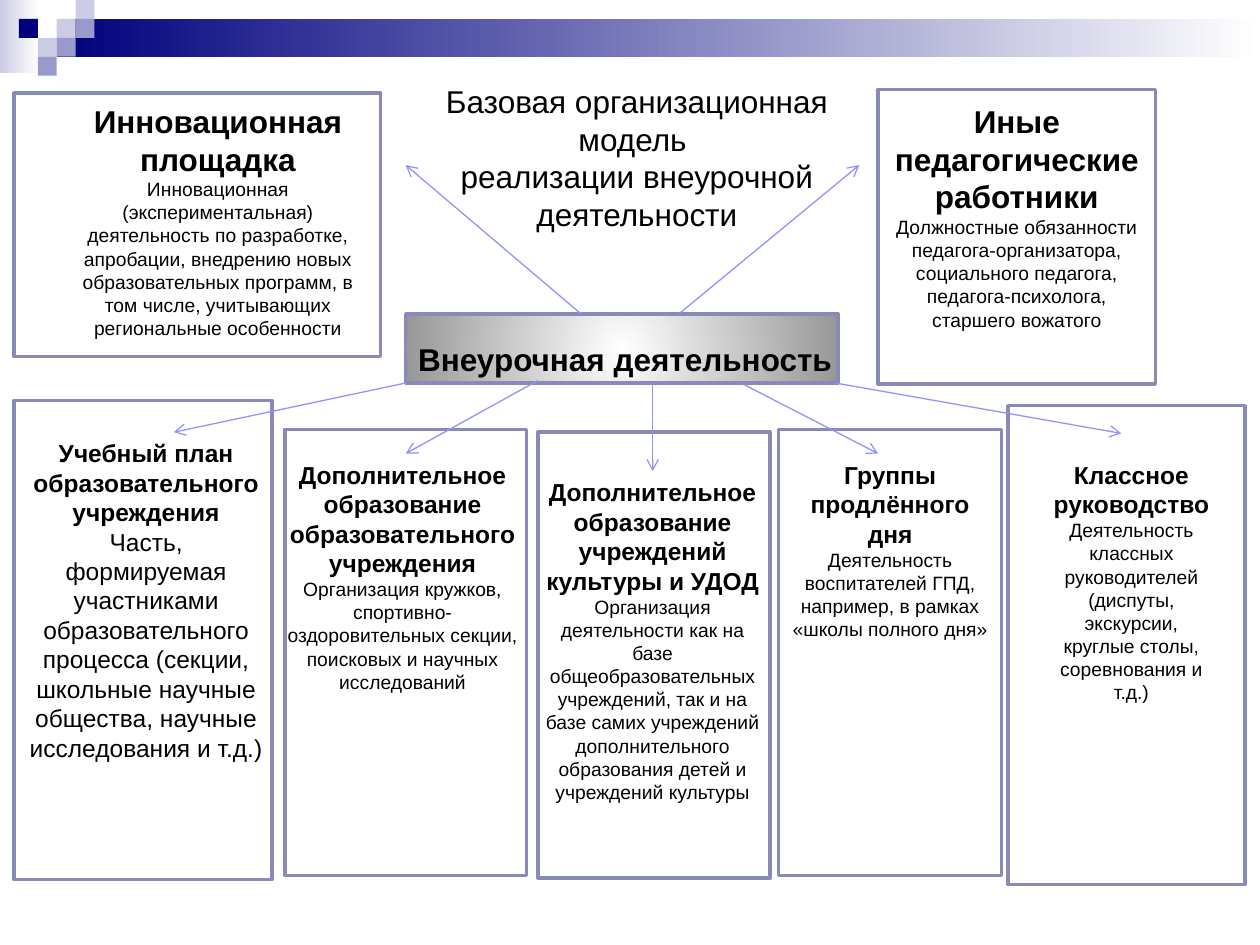
from lxml import etree
from pptx import Presentation
from pptx.dml.color import RGBColor
from pptx.enum.shapes import MSO_CONNECTOR, MSO_SHAPE
from pptx.enum.text import MSO_AUTO_SIZE, PP_ALIGN
from pptx.oxml.ns import qn
from pptx.util import Inches, Pt

RECT, STRAIGHT = MSO_SHAPE.RECTANGLE, MSO_CONNECTOR.STRAIGHT
LEFT, CENTER = PP_ALIGN.LEFT, PP_ALIGN.CENTER
GROW = MSO_AUTO_SIZE.SHAPE_TO_FIT_TEXT
NAVY, LILAC, VIOLET = "00007D", "CCCCE6", "9999CC"
WHITE, BLACK, GREY, FRAME, ARROW = "FFFFFF", "000000", "979797", "8A8AB9", "9393FC"

# The slide is a grid of 100 columns and 75 rows
COLUMNS, ROWS = 100, 75
deck = Presentation()
deck.slide_width, deck.slide_height = Inches(10), Inches(7.5)
page = deck.slides.add_slide(deck.slide_layouts[6])

# Cards: frame box, text box offset (column, row, width, height), heading, body, sizes
TOP_CARDS = [
    ((1.1, 7.4, 29.1, 20.9), (3.2, 0.2, 26, 20), "Инновационная площадка",
     "Инновационная (экспериментальная) деятельность по разработке, апробации, "
     "внедрению новых образовательных программ, в том числе, учитывающих "
     "региональные особенности", 18, 11),
    ((69.7, 7.1, 22, 23.4), (0, 0.5, 22, 22.4), "Иные педагогические работники",
     "Должностные обязанности педагога-организатора, социального педагога, "
     "педагога-психолога, старшего вожатого", 18, 11),
]
BOTTOM_CARDS = [
    ((1.1, 31.8, 20.5, 38), (0, 2.5, 21, 26.9), "Учебный план образовательного учреждения",
     "Часть, формируемая участниками образовательного процесса (секции, школьные "
     "научные общества, научные исследования и т.д.)", 14, 14),
    ((22.6, 34.1, 19.2, 35.4), (-0.9, 1.9, 20.5, 19.7),
     "Дополнительное образование образовательного учреждения",
     "Организация кружков, спортивно-оздоровительных секции, поисковых и научных "
     "исследований", 14, 11),
    ((42.7, 34.3, 18.4, 35.4), (-0.9, 3.1, 20, 27.1),
     "Дополнительное образование учреждений культуры и УДОД",
     "Организация деятельности как на базе общеобразовательных учреждений, так и на "
     "базе самих учреждений дополнительного образования детей и учреждений культуры",
     14, 11),
    ((61.8, 34.1, 17.7, 35.4), (0, 1.9, 17.7, 15.5), "Группы продлённого дня",
     "Деятельность воспитателей ГПД, например, в рамках «школы полного дня»", 14, 11),
    ((80, 32.2, 18.8, 38), (2.3, 3.8, 15, 20.5), "Классное руководство",
     "Деятельность классных руководителей (диспуты, экскурсии, круглые столы, "
     "соревнования и т.д.)", 14, 11),
]
HUB = (32.2, 24.9, 34.3, 5.5)
TITLE = (33.4, 6, 34.3, 13.1)
# Arrows: start column and row, end column and row
ARROWS = [
    (53.9, 24.9, 68.2, 13.1), (46.1, 24.9, 32.2, 13.1),
    (32.2, 30.4, 13.8, 34.3), (42.7, 30.2, 32.2, 36), (51.8, 30.4, 51.8, 37.4),
    (59, 30.5, 69.7, 36), (66.3, 30.4, 89, 34.4),
]


def color(code):
    return RGBColor.from_string(code)


def to_lengths(cells):
    """Turn alternating columns and rows into slide lengths."""
    steps = (deck.slide_width / COLUMNS, deck.slide_height / ROWS)
    return [round(cell * steps[i % 2]) for i, cell in enumerate(cells)]


def add_box(box, fill, line=None):
    """Add a rectangle; a pair of colours as fill gives a left-to-right gradient."""
    shape = page.shapes.add_shape(RECT, *to_lengths(box))
    shape.shadow.inherit = False
    if isinstance(fill, tuple):
        shape.fill.gradient()
        shape.fill.gradient_angle = 0
        for stop, code in zip(shape.fill.gradient_stops, fill):
            stop.color.rgb = color(code)
    else:
        shape.fill.solid()
        shape.fill.fore_color.rgb = color(fill)
    if line:
        shape.line.color.rgb = color(line)
        shape.line.width = Pt(2)
    else:
        shape.line.fill.background()
    return shape


def add_text(box, paragraphs, align=CENTER):
    """Add a text box; each paragraph is (text, size, bold)."""
    frame = page.shapes.add_textbox(*to_lengths(box)).text_frame
    frame.word_wrap = True
    frame.auto_size = GROW
    for i, (text, size, bold) in enumerate(paragraphs):
        para = frame.paragraphs[0] if i == 0 else frame.add_paragraph()
        para.alignment = align
        span = para.add_run()
        span.text = text
        span.font.color.rgb = color(BLACK)
        for name, value in {"name": "Arial", "size": Pt(size), "bold": bold}.items():
            setattr(span.font, name, value)


def add_header(box, side):
    """Fading bands with a checker of small squares in the top left corner."""
    left, top, width, height = box
    add_box((left, top, 2 * side + 0.1, height), (LILAC, WHITE))
    add_box((left + 3 * side, top + side, width - 3 * side, 2 * side), (NAVY, WHITE))
    squares = [(3, 1, LILAC), (4, 0, LILAC), (4, 1, VIOLET), (2, 2, LILAC),
               (1, 1, NAVY), (3, 2, VIOLET), (2, 3, VIOLET)]
    for column, row, fill in squares:
        add_box((left + column * side, top + row * side, side, side), fill)


def add_hub(box):
    """Central box with a circular gradient and its caption."""
    left, top, width, _ = box
    hub = add_box(box, (WHITE, GREY), FRAME)
    gradient = hub.fill._xPr.find(qn("a:gradFill"))
    gradient.remove(gradient.find(qn("a:lin")))
    circle = etree.SubElement(gradient, qn("a:path"), {"path": "circle"})
    etree.SubElement(circle, qn("a:fillToRect"), dict.fromkeys("ltrb", "50000"))
    add_text((left, top + 1.6, width + 5.9, 4), [("Внеурочная деятельность", 18, True)], LEFT)


def add_card(box, offset, heading, body, heading_size, body_size):
    """Framed box with a bold heading and a plain description."""
    add_box(box, WHITE, FRAME)
    text_box = (box[0] + offset[0], box[1] + offset[1], *offset[2:])
    add_text(text_box, [(heading, heading_size, True), (body, body_size, False)])


def add_arrow(ends):
    arrow = page.shapes.add_connector(STRAIGHT, *to_lengths(ends))
    arrow.line.color.rgb = color(ARROW)
    arrow.line.width = Pt(0.75)
    etree.SubElement(arrow.line._get_or_add_ln(), qn("a:tailEnd"), {"type": "arrow"})
    etree.SubElement(arrow._element.spPr, qn("a:effectLst"))


def main():
    add_header((0, 0, COLUMNS, 5.8), 1.5)
    add_hub(HUB)
    for card in TOP_CARDS + BOTTOM_CARDS:
        add_card(*card)
    add_text(TITLE, [("Базовая организационная модель ", 18, False),
                     ("реализации внеурочной деятельности", 18, False)])
    for ends in ARROWS:
        add_arrow(ends)
    deck.save("out.pptx")


if __name__ == "__main__":
    main()
